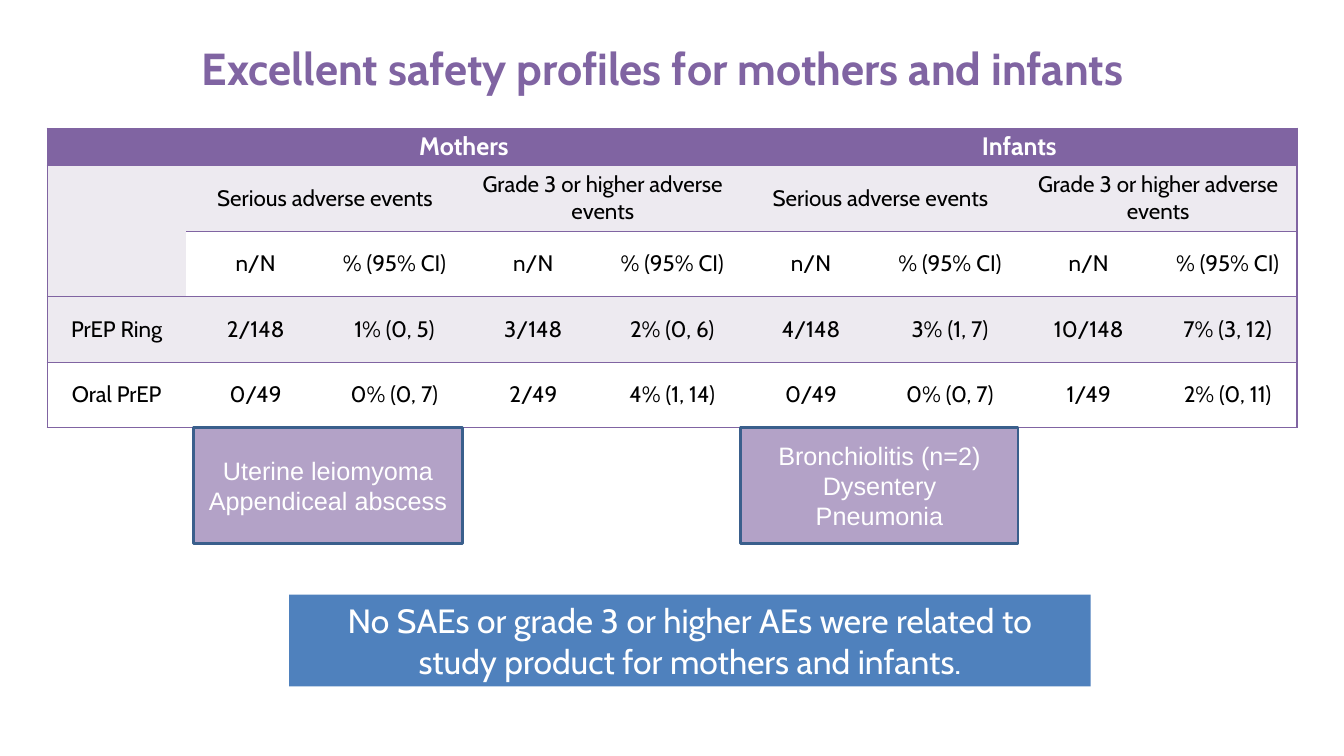
from dataclasses import dataclass

from lxml.etree import SubElement
from pptx import Presentation
from pptx.dml.color import RGBColor
from pptx.enum.shapes import MSO_SHAPE
from pptx.enum.text import MSO_ANCHOR, MSO_AUTO_SIZE, PP_ALIGN
from pptx.oxml.ns import qn
from pptx.util import Pt


@dataclass(frozen=True)
class Theme:
    purple: str = "8064A2"
    lilac: str = "B3A2C7"
    band: str = "EDEAF0"
    blue: str = "4F81BD"
    outline: str = "3A5F8C"
    white: str = "FFFFFF"
    black: str = "000000"
    main_font: str = "Cabin"
    callout_font: str = "Arial"
    title_size: int = 32
    banner_size: int = 24
    header_size: int = 18
    callout_size: int = 18
    cell_size: int = 16


@dataclass(frozen=True)
class Box:
    left: float
    top: float
    width: float
    height: float

    def lengths(self):
        return [Pt(value) for value in (self.left, self.top, self.width, self.height)]


THEME = Theme()
TITLE_BOX = Box(103, 35.3, 741, 82.8)
TABLE_BOX = Box(33.8, 91.5, 892.8, 214)
BANNER_BOX = Box(206.6, 424.8, 572.4, 65.5)
HEADER_HEIGHT = 26.8

EVENTS = ["Serious adverse events", "", "Grade 3 or higher adverse events", ""]
ROWS = [
    ["", "Mothers", "", "", "", "Infants", "", "", ""],
    [""] + EVENTS * 2,
    [""] + ["n/N", "% (95% CI)"] * 4,
    ["PrEP Ring", "2/148", "1% (0, 5)", "3/148", "2% (0, 6)",
     "4/148", "3% (1, 7)", "10/148", "7% (3, 12)"],
    ["Oral PrEP", "0/49", "0% (0, 7)", "2/49", "4% (1, 14)",
     "0/49", "0% (0, 7)", "1/49", "2% (0, 11)"],
]
ROW_FILLS = [THEME.purple, THEME.band, THEME.white, THEME.band, THEME.white]
# First and last cell of each merged area, as (row, column)
MERGES = [((0, 1), (0, 4)), ((0, 5), (0, 8)), ((1, 0), (2, 0))]
MERGES += [((1, column), (1, column + 1)) for column in range(1, 9, 2)]


def format_text(frame, font_name, size, color, bold=False):
    for para in frame.paragraphs:
        para.alignment = PP_ALIGN.CENTER
        for span in para.runs:
            span.font.name = font_name
            span.font.size = Pt(size)
            span.font.bold = bold
            span.font.color.rgb = RGBColor.from_string(color)


def set_borders(cell, sides):
    """Draw a purple line on the given sides (of L, R, T, B) and none on the others."""
    properties = cell._tc.get_or_add_tcPr()
    for side in "LRTB":
        line = SubElement(properties, qn(f"a:ln{side}"), w=str(Pt(1)))
        if side in sides:
            fill = SubElement(line, qn("a:solidFill"))
            SubElement(fill, qn("a:srgbClr"), val=THEME.purple)
        else:
            SubElement(line, qn("a:noFill"))


def border_sides(row, first_column, last_column):
    sides = "TB"
    if first_column == 0:
        sides += "L"
        sides = sides.replace({1: "B", 2: "T"}.get(row, " "), "")
    if last_column == len(ROWS[0]) - 1:
        sides += "R"
    return sides


def add_title(slide, box):
    title = slide.shapes.title
    title.left, title.top, title.width, title.height = box.lengths()
    frame = title.text_frame
    frame.text = "Excellent safety profiles for mothers and infants"
    frame.auto_size = MSO_AUTO_SIZE.NONE
    frame.vertical_anchor = MSO_ANCHOR.TOP
    frame.paragraphs[0].line_spacing = Pt(28.5)
    format_text(frame, THEME.main_font, THEME.title_size, THEME.purple, bold=True)


def fill_cell(cell, text, row):
    cell.margin_left = cell.margin_right = Pt(5)
    cell.margin_top = cell.margin_bottom = 0
    cell.vertical_anchor = MSO_ANCHOR.MIDDLE
    cell.fill.solid()
    cell.fill.fore_color.rgb = RGBColor.from_string(ROW_FILLS[row])
    if not text:
        return
    cell.text_frame.text = text
    cell.text_frame.paragraphs[0].space_after = Pt(6)
    if row == 0:
        format_text(cell.text_frame, THEME.main_font, THEME.header_size, THEME.white, bold=True)
    else:
        format_text(cell.text_frame, THEME.main_font, THEME.cell_size, THEME.black)


def add_safety_table(slide, box):
    table = slide.shapes.add_table(len(ROWS), len(ROWS[0]), *box.lengths()).table
    table.first_row = table.horz_banding = False
    for column in table.columns:
        column.width = Pt(box.width / len(ROWS[0]))
    for index, row in enumerate(table.rows):
        body_height = (box.height - HEADER_HEIGHT) / (len(ROWS) - 1)
        row.height = Pt(body_height if index else HEADER_HEIGHT)
    for first, last in MERGES:
        table.cell(*first).merge(table.cell(*last))
    for row, texts in enumerate(ROWS):
        for column, text in enumerate(texts):
            cell = table.cell(row, column)
            span_width = cell.span_width if cell.is_merge_origin else 1
            set_borders(cell, border_sides(row, column, column + span_width - 1))
            fill_cell(cell, text, row)


def add_panel(slide, box, lines, fill_color):
    panel = slide.shapes.add_shape(MSO_SHAPE.RECTANGLE, *box.lengths())
    panel.shadow.inherit = False
    panel.fill.solid()
    panel.fill.fore_color.rgb = RGBColor.from_string(fill_color)
    panel.line.fill.background()
    frame = panel.text_frame
    frame.word_wrap = True
    frame.vertical_anchor = MSO_ANCHOR.MIDDLE
    frame.text = "\n".join(lines)
    return panel


def add_callout(slide, box, lines):
    callout = add_panel(slide, box, lines, THEME.lilac)
    callout.line.color.rgb = RGBColor.from_string(THEME.outline)
    callout.line.width = Pt(2)
    format_text(callout.text_frame, THEME.callout_font, THEME.callout_size, THEME.white)


def add_banner(slide, box):
    lines = ["No SAEs or grade 3 or higher AEs were related to",
             "study product for mothers and infants."]
    banner = add_panel(slide, box, lines, THEME.blue)
    format_text(banner.text_frame, THEME.main_font, THEME.banner_size, THEME.white)


def add_safety_slide(deck):
    slide = deck.slides.add_slide(deck.slide_layouts[5])
    add_title(slide, TITLE_BOX)
    add_safety_table(slide, TABLE_BOX)
    add_banner(slide, BANNER_BOX)
    table_bottom = TABLE_BOX.top + TABLE_BOX.height
    add_callout(slide, Box(529.2, table_bottom, 198, 82.8),
                ["Bronchiolitis (n=2)", "Dysentery", "Pneumonia"])
    add_callout(slide, Box(138.2, table_bottom, 192.2, 82.8),
                ["Uterine leiomyoma", "Appendiceal abscess"])


def main():
    deck = Presentation()
    deck.slide_width, deck.slide_height = Pt(960), Pt(540)
    add_safety_slide(deck)
    deck.save("out.pptx")


if __name__ == "__main__":
    main()
